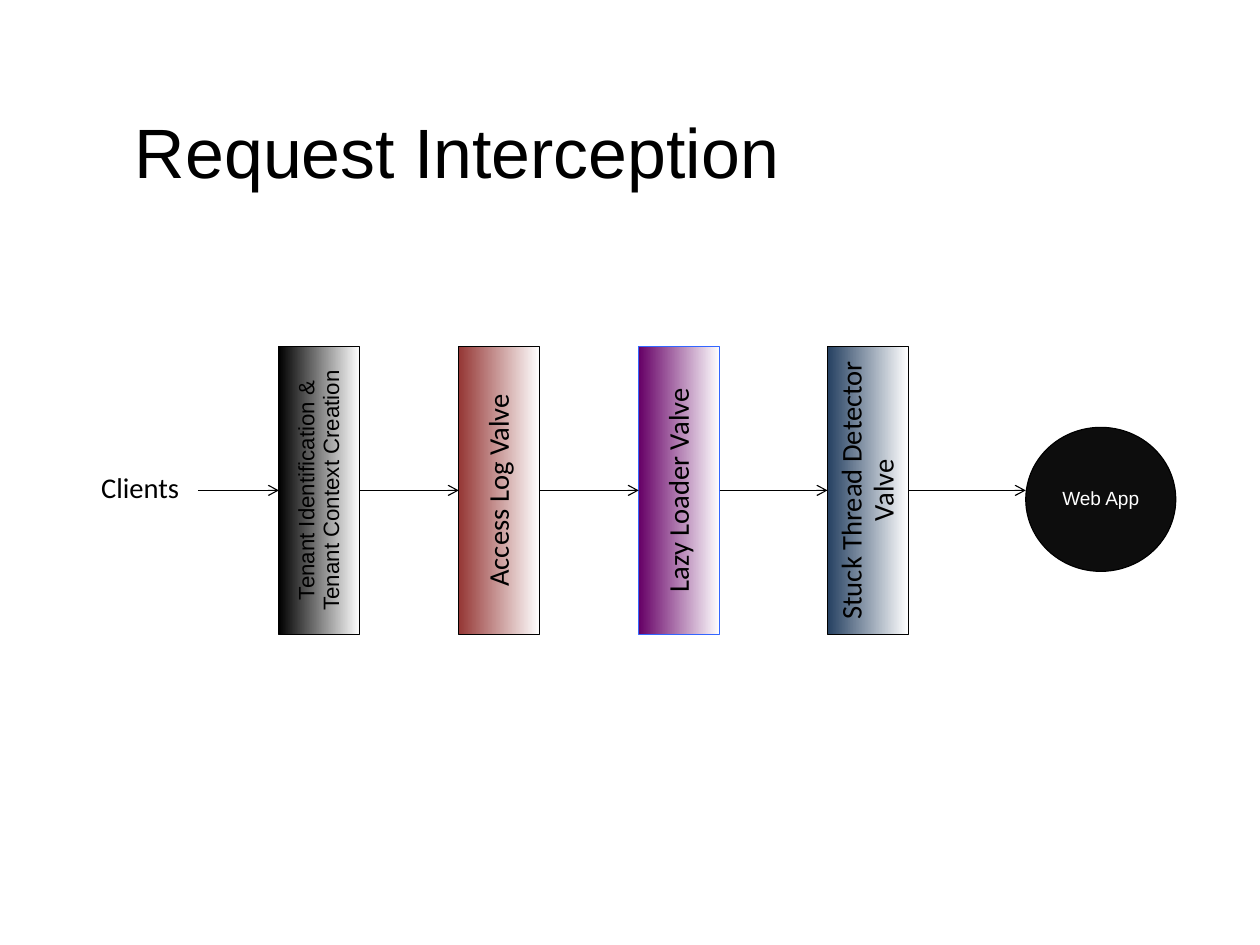
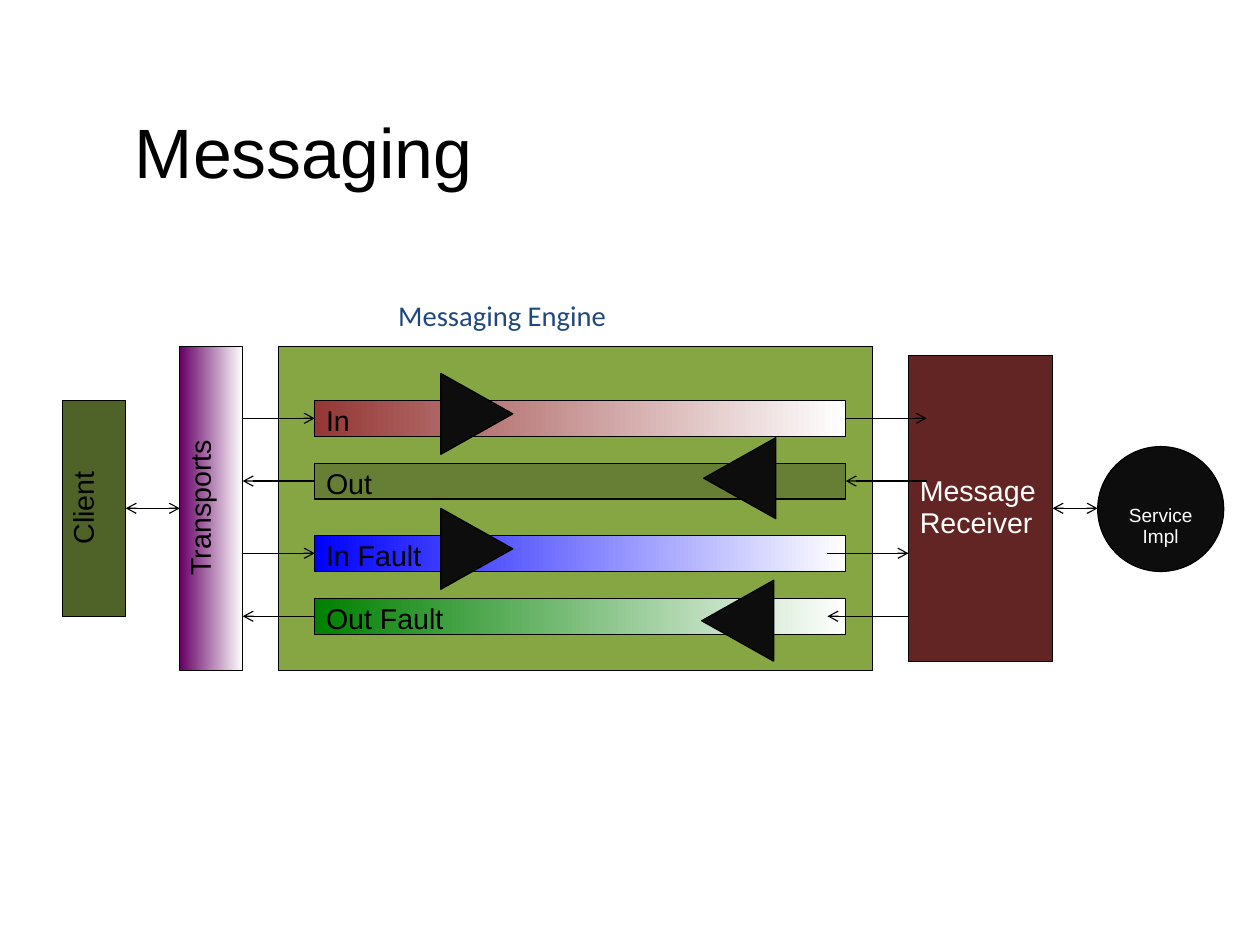
from pptx import Presentation
from pptx.dml.color import RGBColor
from pptx.enum.shapes import MSO_CONNECTOR, MSO_SHAPE
from pptx.enum.text import MSO_ANCHOR, MSO_AUTO_SIZE, PP_ALIGN
from pptx.oxml.ns import qn
from pptx.util import Pt
from lxml.etree import SubElement

# Shared style
COLORS = {
    "black": "000000", "white": "FFFFFF", "ink": "0D0D0D", "red": "953735",
    "purple": "660066", "navy": "254061", "bright blue": "3366FF",
    "blue": "0000FF", "green": "008000", "olive": "677F34",
    "dark olive": "4F6228", "lime": "86A644", "maroon": "632523",
    "heading": "1F497D",
}
LEFT, RIGHT = 1, 3  # connection sites of a rectangle

# Request interception: label, left, colour, outline, font, size
VALVES = [
    ("Tenant Identification & Tenant Context Creation", 175.7, "black", "black", "Arial", 14),
    ("Access Log Valve", 289, "red", "black", "Calibri", 18),
    ("Lazy Loader Valve", 402.4, "purple", "bright blue", "Calibri", 18),
    ("Stuck Thread Detector Valve", 521.3, "navy", "black", "Calibri", 18),
]
VALVE_TOP, VALVE_WIDTH, VALVE_HEIGHT = 218.2, 51, 181.4
VALVE_MIDDLE = VALVE_TOP + VALVE_HEIGHT / 2

# Messaging: label, middle, colour, gradient, inbound, arrowhead centre, receiver arrow ends
FLOWS = [
    ("In", 263.5, "red", True, True, (300.4, 260.7), (None, 583.8)),
    ("Out", 303, "olive", False, False, (466, 301.2), (None, 583.8)),
    ("In Fault", 348.5, "blue", True, True, (300.4, 345.7), (521.3, 572.3)),
    ("Out Fault", 388.2, "green", True, False, (464.7, 391), (521.3, 572.3)),
]
FLOW_LEFT, FLOW_WIDTH, FLOW_HEIGHT = 198.3, 334.5, 22.6
MARK_WIDTH, MARK_HEIGHT = 51, 45.4
MESSAGING_MIDDLE = 320.2
TRANSPORTS_LEFT, TRANSPORTS_WIDTH = 113.3, 39.6


def rgb(name):
    return RGBColor.from_string(COLORS[name])


def write(shape, text, size, color, font="Arial", align=PP_ALIGN.LEFT,
          anchor=MSO_ANCHOR.TOP, spacing=None):
    frame = shape.text_frame
    frame.word_wrap = True
    frame.vertical_anchor = anchor
    frame.text = text
    paragraph = frame.paragraphs[0]
    paragraph.alignment = align
    if spacing:
        paragraph.line_spacing = spacing
    paragraph.font.size = Pt(size)
    paragraph.font.name = font
    paragraph.font.color.rgb = rgb(color)
    return frame


def add_titled_slide(prs, text):
    slide = prs.slides.add_slide(prs.slide_layouts[5])
    title = slide.shapes.title
    title.left, title.top, title.width, title.height = Pt(85), Pt(67.7), Pt(652.3), Pt(54)
    frame = write(title, text, 44, "black", anchor=MSO_ANCHOR.MIDDLE)
    frame.auto_size = MSO_AUTO_SIZE.NONE
    frame.margin_left = frame.margin_right = frame.margin_top = frame.margin_bottom = 0
    return slide


def add_part(slide, box, color, kind=MSO_SHAPE.RECTANGLE, gradient=False, outline="black"):
    shape = slide.shapes.add_shape(kind, *map(Pt, box))
    shape.shadow.inherit = False
    if gradient:
        shape.fill.gradient()
        shape.fill.gradient_angle = 0
        for stop, position, name in zip(shape.fill.gradient_stops, (0, 1), (color, "white")):
            stop.position = position
            stop.color.rgb = rgb(name)
    else:
        shape.fill.solid()
        shape.fill.fore_color.rgb = rgb(color)
    shape.line.color.rgb = rgb(outline)
    shape.line.width = Pt(0.75)
    return shape


def turn_text(shape):
    shape.text_frame._txBody.find(qn("a:bodyPr")).set("vert", "vert270")


def add_label(slide, box, text, color):
    label = slide.shapes.add_textbox(*map(Pt, box))
    frame = write(label, text, 18, color, "Calibri")
    frame.auto_size = MSO_AUTO_SIZE.SHAPE_TO_FIT_TEXT


def locate(end):
    """Give the point of an (x, y) pair in points or a (shape, site) pair."""
    if isinstance(end[0], (int, float)):
        return Pt(end[0]), Pt(end[1])
    shape, site = end
    return shape.left + (shape.width if site == RIGHT else 0), shape.top + shape.height // 2


def add_arrow(slide, start, end, both=False):
    arrow = slide.shapes.add_connector(MSO_CONNECTOR.STRAIGHT, *locate(start), *locate(end))
    for place, connect in ((start, arrow.begin_connect), (end, arrow.end_connect)):
        if not isinstance(place[0], (int, float)):
            connect(*place)
    arrow.line.color.rgb = rgb("black")
    arrow.line.width = Pt(0.75)
    line = arrow.line._get_or_add_ln()
    for tag in (("a:headEnd", "a:tailEnd") if both else ("a:tailEnd",)):
        SubElement(line, qn(tag)).set("type", "arrow")
    SubElement(arrow._element.spPr, qn("a:effectLst"))


def build_interception(prs):
    slide = add_titled_slide(prs, "Request Interception")
    add_label(slide, (56.7, 292.3, 90.7, 28.8), "Clients", "black")

    # Chain of valves, each fed by the one before
    source = (124.6, VALVE_MIDDLE)
    for text, left, color, outline, font, size in VALVES:
        valve = add_part(slide, (left, VALVE_TOP, VALVE_WIDTH, VALVE_HEIGHT), color,
                         gradient=True, outline=outline)
        write(valve, text, size, "black", font, PP_ALIGN.CENTER, MSO_ANCHOR.MIDDLE, 0.93)
        turn_text(valve)
        add_arrow(slide, source, (valve, LEFT))
        source = (valve, RIGHT)

    web_app = add_part(slide, (646.2, 269.2, 94.5, 90.7), "ink", MSO_SHAPE.OVAL)
    write(web_app, "Web App", 12, "white", align=PP_ALIGN.CENTER,
          anchor=MSO_ANCHOR.MIDDLE, spacing=0.93)
    add_arrow(slide, source, (646.2, VALVE_MIDDLE))


def build_messaging(prs):
    slide = add_titled_slide(prs, "Messaging")

    # Engine, receiver and service
    add_label(slide, (243.8, 184.3, 203.8, 28.8), "Messaging Engine", "heading")
    add_part(slide, (175.7, 218.2, 374.2, 204), "lime")
    receiver = add_part(slide, (572.4, 223.7, 90.7, 193), "maroon")
    write(receiver, "Message Receiver", 18, "white", anchor=MSO_ANCHOR.MIDDLE, spacing=0.93)
    service = add_part(slide, (691.5, 281.3, 79.4, 78.7), "ink", MSO_SHAPE.OVAL)
    write(service, "ServiceImpl", 12, "white", align=PP_ALIGN.CENTER,
          anchor=MSO_ANCHOR.BOTTOM, spacing=0.93)
    add_arrow(slide, (receiver, RIGHT), (691.5, MESSAGING_MIDDLE), both=True)

    # Client and transports
    sides = []
    for text, left, width, height, color, gradient in (
            ("Client", 39.5, 39.7, 136, "dark olive", False),
            ("Transports", TRANSPORTS_LEFT, TRANSPORTS_WIDTH, 204, "purple", True)):
        side = add_part(slide, (left, MESSAGING_MIDDLE - height / 2, width, height),
                        color, gradient=gradient)
        frame = write(side, text, 18, "black", align=PP_ALIGN.CENTER, spacing=0.93)
        frame.margin_top = Pt(6.5)
        turn_text(side)
        sides.append(side)
    client, transports = sides
    add_arrow(slide, (client, RIGHT), (transports, LEFT), both=True)

    # Flows with their direction marks and arrows
    for text, middle, color, gradient, inbound, mark_center, (inner, outer) in FLOWS:
        flow = add_part(slide, (FLOW_LEFT, middle - FLOW_HEIGHT / 2, FLOW_WIDTH, FLOW_HEIGHT),
                        color, gradient=gradient)
        write(flow, text, 18, "black", spacing=0.93)
        mark_x, mark_y = mark_center
        mark = add_part(slide, (mark_x - MARK_WIDTH / 2, mark_y - MARK_HEIGHT / 2,
                                MARK_WIDTH, MARK_HEIGHT), "ink", MSO_SHAPE.ISOSCELES_TRIANGLE)
        mark.rotation = 90 if inbound else 270
        transport_end = (TRANSPORTS_LEFT + TRANSPORTS_WIDTH, middle)
        engine_end = (inner, middle) if inner else (flow, RIGHT)
        for ends in ((transport_end, (flow, LEFT)), (engine_end, (outer, middle))):
            add_arrow(slide, *(ends if inbound else ends[::-1]))


def main():
    prs = Presentation()
    prs.slide_width, prs.slide_height = Pt(793.75), Pt(595.25)
    build_interception(prs)
    build_messaging(prs)
    prs.save("out.pptx")


if __name__ == "__main__":
    main()
